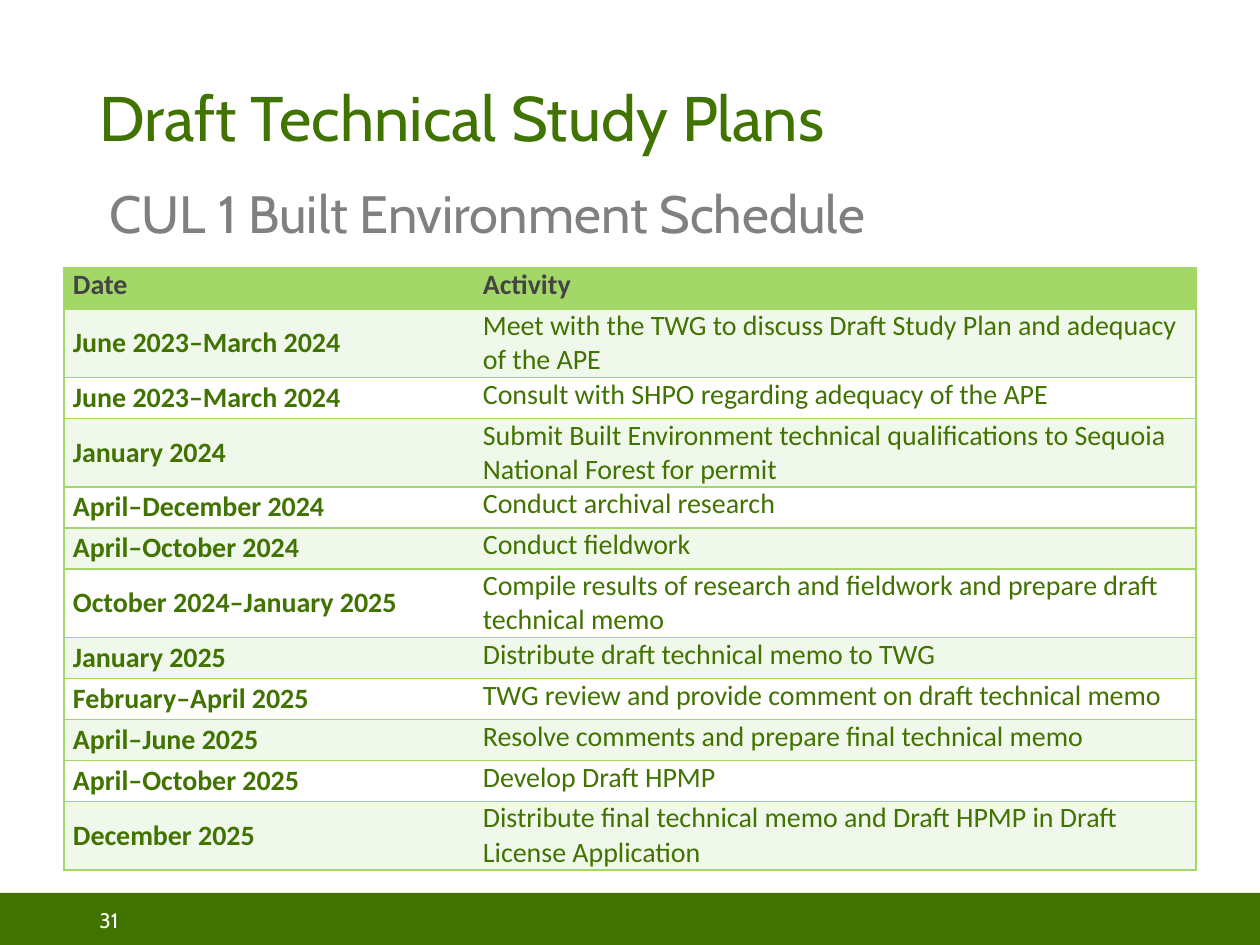
from lxml import etree
from pptx import Presentation
from pptx.dml.color import RGBColor
from pptx.enum.shapes import MSO_SHAPE
from pptx.enum.text import MSO_ANCHOR, MSO_AUTO_SIZE, PP_ALIGN
from pptx.oxml.ns import qn
from pptx.util import Emu, Pt

RECT = MSO_SHAPE.RECTANGLE
TOP, MIDDLE = MSO_ANCHOR.TOP, MSO_ANCHOR.MIDDLE
LEFT = PP_ALIGN.LEFT
NO_FIT = MSO_AUTO_SIZE.NONE

PX = 914400 // 126
COLORS = {
    "green": "417300",
    "lime": "A3D869",
    "pale": "F0F8EB",
    "white": "FFFFFF",
    "gray": "808080",
    "dark": "444444",
}

SCHEDULE = [
    ("Date", "Activity"),
    ("June 2023–March 2024",
     "Meet with the TWG to discuss Draft Study Plan and adequacy of the APE"),
    ("June 2023–March 2024", "Consult with SHPO regarding adequacy of the APE"),
    ("January 2024",
     "Submit Built Environment technical qualifications to Sequoia National Forest for permit"),
    ("April–December 2024", "Conduct archival research"),
    ("April–October 2024", "Conduct fieldwork"),
    ("October 2024–January 2025",
     "Compile results of research and fieldwork and prepare draft technical memo"),
    ("January 2025", "Distribute draft technical memo to TWG"),
    ("February–April 2025", "TWG review and provide comment on draft technical memo"),
    ("April–June 2025", "Resolve comments and prepare final technical memo"),
    ("April–October 2025", "Develop Draft HPMP"),
    ("December 2025",
     "Distribute final technical memo and Draft HPMP in Draft License Application"),
]


def px(n):
    return Emu(n * PX)


def rgb(name):
    return RGBColor.from_string(COLORS[name])


class Deck:
    heading_font = "Cabin"
    table_font = "Calibri"

    def __init__(self, width, height):
        self.prs = Presentation()
        self.prs.slide_width, self.prs.slide_height = px(width), px(height)
        self.s = None

    def add_slide(self):
        self.s = self.prs.slides.add_slide(self.prs.slide_layouts[1])

    def style(self, p, font, size, color, bold=False):
        p.alignment = LEFT
        p.space_before = Pt(0)
        f = p.font
        f.name, f.size, f.bold = font, Pt(size), bold
        f.color.rgb = rgb(color)

    def set_text(self, sp, box, text, size, color, anchor=MIDDLE):
        """Place a text shape and fill it with one heading-font paragraph."""
        sp.left, sp.top, sp.width, sp.height = map(px, box)
        tf = sp.text_frame
        tf.word_wrap, tf.auto_size, tf.vertical_anchor = True, NO_FIT, anchor
        p = tf.paragraphs[0]
        p.text = text
        self.style(p, self.heading_font, size, color)
        return p

    def title(self, box, text):
        p = self.set_text(self.s.shapes.title, box, text, 36, "green")
        p.line_spacing = 0.9

    def subtitle(self, box, text, indent):
        p = self.set_text(self.s.placeholders[1], box, text, 30, "gray", TOP)
        p.level = 1
        p.line_spacing = 1.1
        p.space_after = Pt(12)
        pPr = p._p.get_or_add_pPr()
        pPr.set("marL", str(px(indent)))
        pPr.set("indent", "0")
        # The bullet element belongs before the default run properties
        pPr.find(qn("a:defRPr")).addprevious(etree.Element(qn("a:buNone")))

    def label(self, box, text):
        sp = self.s.shapes.add_textbox(*map(px, box))
        self.set_text(sp, box, text, 12, "white")

    def bar(self, box, color):
        sp = self.s.shapes.add_shape(RECT, *map(px, box))
        sp.shadow.inherit = False
        sp.fill.solid()
        sp.fill.fore_color.rgb = rgb(color)
        sp.line.fill.background()

    def borders(self, cell, sides):
        """Draw 1 pt lime lines on the given sides, none on the others."""
        tcPr = cell._tc.get_or_add_tcPr()
        for i, side in enumerate("LRTB"):
            ln = etree.Element(qn(f"a:ln{side}"), w=str(Pt(1)))
            if side in sides:
                fill = etree.SubElement(ln, qn("a:solidFill"))
                etree.SubElement(fill, qn("a:srgbClr"), val=COLORS["lime"])
            else:
                etree.SubElement(ln, qn("a:noFill"))
            tcPr.insert(i, ln)

    def cell(self, cell, text, fill, color, bold, anchor, sides):
        cell.margin_left = cell.margin_right = px(9)
        cell.margin_top = cell.margin_bottom = 0
        cell.vertical_anchor = anchor
        cell.fill.solid()
        cell.fill.fore_color.rgb = rgb(fill)
        p = cell.text_frame.paragraphs[0]
        p.text = text
        self.style(p, self.table_font, 16, color, bold)
        p.space_after = Pt(3)
        self.borders(cell, sides)

    def table(self, left, top, widths, row_height, rows):
        frame = self.s.shapes.add_table(
            len(rows), len(widths), px(left), px(top),
            px(sum(widths)), px(row_height * len(rows)))
        tbl = frame.table
        tbl.horz_banding = False
        for column, width in zip(tbl.columns, widths):
            column.width = px(width)
        for i, row in enumerate(rows):
            header = i == 0
            fill = "lime" if header else ("white", "pale")[i % 2]
            for j, text in enumerate(row):
                first = j == 0
                self.cell(tbl.cell(i, j), text, fill,
                          color="dark" if header else "green",
                          bold=header or first,
                          anchor=MIDDLE if first and not header else TOP,
                          sides="LTB" if first else "RTB")


def main():
    deck = Deck(1260, 945)
    deck.add_slide()
    deck.bar((0, 893, 1260, 52), "green")
    deck.title((87, 63, 1086, 116), "Draft Technical Study Plans")
    deck.subtitle((87, 168, 1086, 673), "CUL 1 Built Environment Schedule", 10)
    deck.label((87, 895, 284, 50), "31")
    deck.table(64, 268, (410, 722), 41, SCHEDULE)
    deck.prs.save("out.pptx")


if __name__ == "__main__":
    main()
